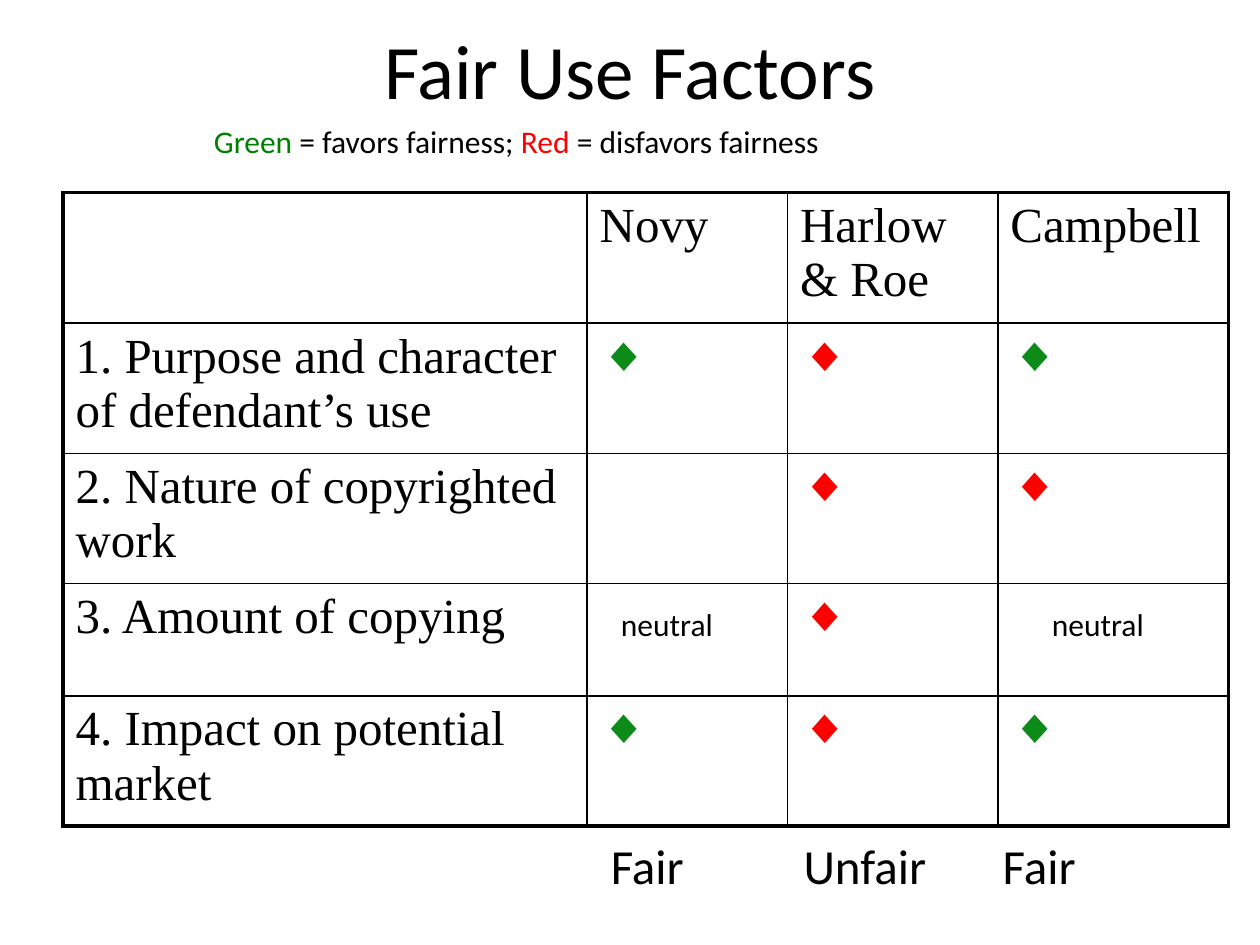
from dataclasses import dataclass

from lxml import etree
from pptx import Presentation
from pptx.dml.color import RGBColor
from pptx.enum.text import MSO_ANCHOR, PP_ALIGN
from pptx.oxml.ns import qn
from pptx.util import Inches, Pt

LEFT, CENTER = PP_ALIGN.LEFT, PP_ALIGN.CENTER
TOP, MIDDLE = MSO_ANCHOR.TOP, MSO_ANCHOR.MIDDLE

BLACK, LEGEND_GREEN, GREEN, RED = "000000", "008000", "0D8B19", "FF0000"
SANS, SERIF = "Calibri", "Times New Roman"
THIN, THICK = 1, 2.25


@dataclass
class Span:
    text: str
    color: str = BLACK


@dataclass
class Label:
    spans: list[Span]
    left: float
    top: float
    width: float
    height: float
    size: float = 18
    align: PP_ALIGN = LEFT
    anchor: MSO_ANCHOR = TOP
    tabs: tuple[float, ...] = ()


FAVORS, DISFAVORS, BLANK = Span("◆", GREEN), Span("◆", RED), Span("")

LABELS = [
    Label([Span("Fair Use Factors")], 0.75, 0.17, 8.5, 0.75, 44, CENTER, MIDDLE),
    Label([Span("Fair\tUnfair\tFair")], 4.75, 6.58, 4.24, 0.57, 28, tabs=(1.53, 3.11)),
    Label([Span("Green", LEGEND_GREEN), Span(" = favors fairness; "),
           Span("Red", RED), Span(" = disfavors fairness")], 1.6, 0.92, 6.8, 0.5),
]
NEUTRAL_LEFTS = (4.83, 8.25)

COLUMN_WIDTHS = (4.16, 1.59, 1.67, 1.83)
ROW_HEIGHT = 0.89
FACTORS = [
    [BLANK, Span("Novy"), Span("Harlow & Roe"), Span("Campbell")],
    [Span("1. Purpose and character of defendant’s use"), FAVORS, DISFAVORS, FAVORS],
    [Span("2. Nature of copyrighted work"), BLANK, DISFAVORS, DISFAVORS],
    [Span("3. Amount of copying"), BLANK, DISFAVORS, BLANK],
    [Span("4. Impact on potential market"), FAVORS, DISFAVORS, FAVORS],
]


def rgb(value: str) -> RGBColor:
    return RGBColor.from_string(value)


def add_span(para, span: Span, size: float, font_name: str) -> None:
    run = para.add_run()
    run.text = span.text
    for name, value in {"name": font_name, "size": Pt(size)}.items():
        setattr(run.font, name, value)
    run.font.color.rgb = rgb(span.color)


def add_label(page, label: Label) -> None:
    box = page.shapes.add_textbox(*map(Inches, (label.left, label.top, label.width, label.height)))
    frame = box.text_frame
    for name, value in {"word_wrap": True, "vertical_anchor": label.anchor}.items():
        setattr(frame, name, value)
    para = frame.paragraphs[0]
    para.alignment = label.align
    if label.tabs:
        tab_list = etree.SubElement(para._p.get_or_add_pPr(), qn("a:tabLst"))
        for stop in label.tabs:
            etree.SubElement(tab_list, qn("a:tab"), pos=str(Inches(stop)), algn="l")
    for span in label.spans:
        add_span(para, span, label.size, SANS)


def set_borders(cell, widths: dict[str, float]) -> None:
    properties = cell._tc.get_or_add_tcPr()
    for position, (side, width) in enumerate(widths.items()):
        line = etree.Element(qn(f"a:ln{side}"), w=str(Pt(width)))
        fill = etree.SubElement(line, qn("a:solidFill"))
        etree.SubElement(fill, qn("a:srgbClr"), val=BLACK)
        properties.insert(position, line)


def add_factor_table(page, rows: list[list[Span]]) -> None:
    last_row, last_column = len(rows) - 1, len(COLUMN_WIDTHS) - 1
    holder = page.shapes.add_table(len(rows), len(COLUMN_WIDTHS), Inches(0.5), Inches(1.53),
                                   Inches(sum(COLUMN_WIDTHS)), Inches(5.02))
    table = holder.table
    for name in ("first_row", "horz_banding"):
        setattr(table, name, False)
    for column, width in zip(table.columns, COLUMN_WIDTHS):
        column.width = Inches(width)
    for r, spans in enumerate(rows):
        table.rows[r].height = Inches(ROW_HEIGHT)
        for c, span in enumerate(spans):
            cell = table.cell(r, c)
            cell.fill.background()
            # Heavy outer frame, thin inner grid
            set_borders(cell, {
                "L": THICK if c == 0 else THIN,
                "R": THICK if c == last_column else THIN,
                "T": THICK if r == 0 else THIN,
                "B": THICK if r == last_row else THIN,
            })
            if span.text:
                add_span(cell.text_frame.paragraphs[0], span, 28, SERIF)
    holder.height = Inches(5.02)


def main() -> None:
    deck = Presentation()
    deck.slide_width, deck.slide_height = Inches(10), Inches(7.5)
    page = deck.slides.add_slide(deck.slide_layouts[6])

    # Title, verdicts and colour legend
    for label in LABELS:
        add_label(page, label)

    # Factors against cases
    add_factor_table(page, FACTORS)

    # Neutral marks over the third factor
    for left in NEUTRAL_LEFTS:
        add_label(page, Label([Span("neutral")], left, 4.75, 1.14, 0.5))

    deck.save("out.pptx")


if __name__ == "__main__":
    main()
